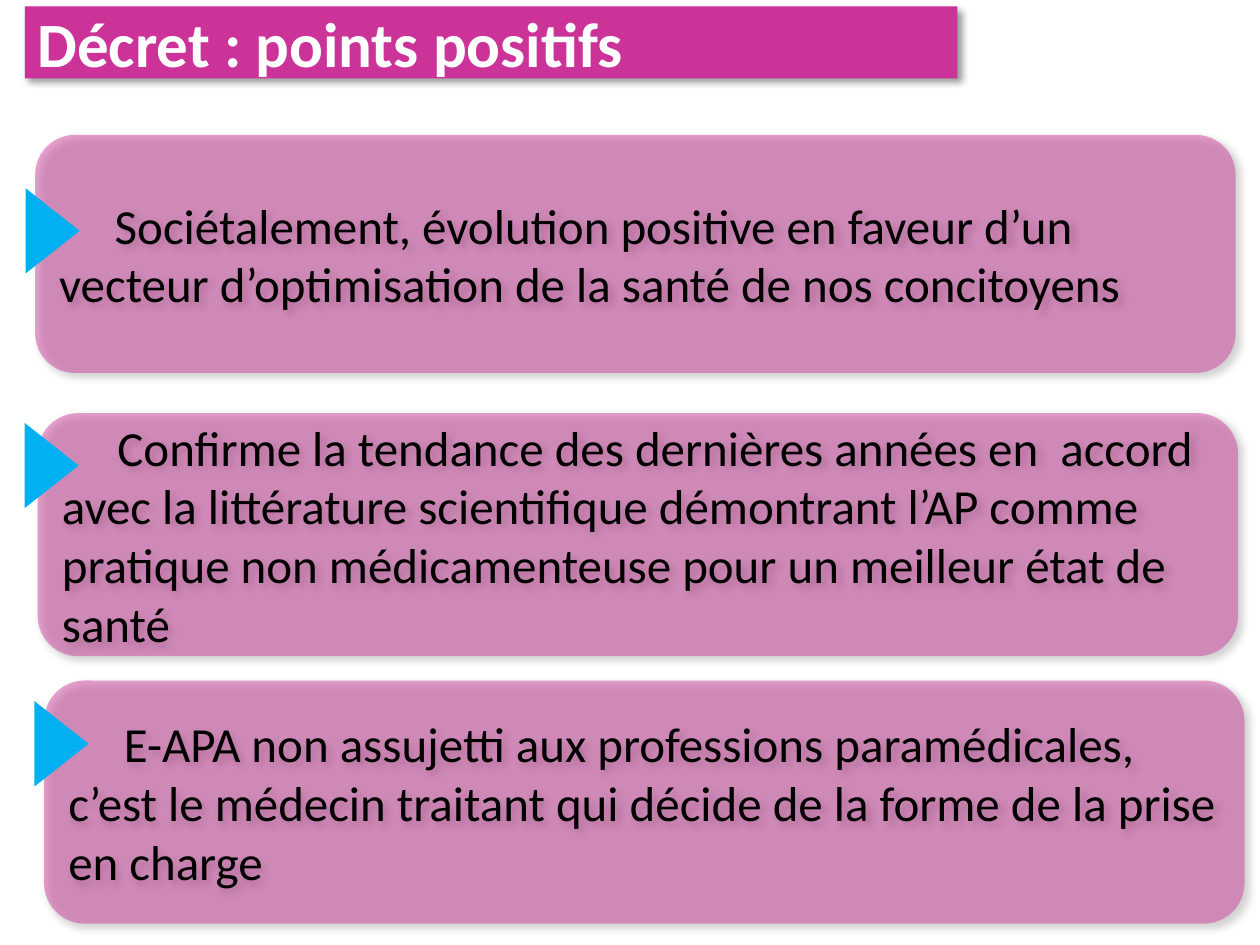
from lxml.etree import SubElement
from pptx import Presentation
from pptx.dml.color import RGBColor
from pptx.enum.shapes import MSO_SHAPE
from pptx.enum.text import MSO_ANCHOR, MSO_AUTO_SIZE, PP_ALIGN
from pptx.oxml.ns import qn
from pptx.util import Cm, Pt

COLORS = {"magenta": "CC3399", "blue": "00B0F0", "white": "FFFFFF", "black": "000000"}
FONT = "Calibri"
TITLE = "Décret : points positifs"
BOX_WIDTH = 24.2
MARKER_WIDTH, MARKER_HEIGHT = 1.72, 1.09
FIRST_LINE_INDENT = 1.12

# text, box (left, top, height) and marker (left, top before rotation), in cm
POINTS = [
    ("Sociétalement, évolution positive en faveur d’un vecteur d’optimisation "
     "de la santé de nos concitoyens", (0.71, 2.72, 4.8), (0.2, 4.11)),
    ("Confirme la tendance des dernières années en  accord avec la littérature "
     "scientifique démontrant l’AP comme pratique non médicamenteuse pour un "
     "meilleur état de santé", (0.76, 8.33, 4.9), (0.18, 8.84)),
    ("E-APA non assujetti aux professions paramédicales, c’est le médecin "
     "traitant qui décide de la forme de la prise en charge",
     (0.89, 13.72, 4.9), (0.38, 14.45)),
]


def fill_shape(shape, color, opacity=100):
    shape.fill.solid()
    shape.fill.fore_color.rgb = RGBColor.from_string(COLORS[color])
    shape.line.fill.background()
    shape.shadow.inherit = False
    if opacity < 100:
        paint = shape.fill._xPr.find(qn("a:solidFill"))[0]
        SubElement(paint, qn("a:alpha"), val=str(opacity * 1000))


def add_shadow(shape):
    effects = shape._element.spPr.find(qn("a:effectLst"))
    shadow = SubElement(effects, qn("a:outerShdw"), blurRad=str(Pt(4)),
                        dist=str(Pt(3)), dir=str(45 * 60000), algn="tl", rotWithShape="0")
    paint = SubElement(shadow, qn("a:srgbClr"), val=COLORS["black"])
    SubElement(paint, qn("a:alpha"), val="40000")


def write_text(shape, text, size, color, bold=False):
    frame = shape.text_frame
    frame.text = text
    frame.word_wrap = True
    frame.auto_size = MSO_AUTO_SIZE.NONE
    frame.vertical_anchor = MSO_ANCHOR.MIDDLE
    para = frame.paragraphs[0]
    para.alignment = PP_ALIGN.LEFT
    font = para.runs[0].font
    font.name, font.size, font.bold = FONT, Pt(size), bold
    font.color.rgb = RGBColor.from_string(COLORS[color])
    return para


def add_title(page):
    title = page.shapes.title
    title.left, title.top, title.width, title.height = Cm(0.5), Cm(0.13), Cm(18.8), Cm(1.45)
    outline = SubElement(title._element.spPr, qn("a:prstGeom"), prst="roundRect")
    SubElement(outline, qn("a:avLst"))
    fill_shape(title, "magenta")
    add_shadow(title)
    write_text(title, TITLE, 36, "white", bold=True)


def add_point(page, text, box_place, marker_place):
    left, top, height = box_place
    box = page.shapes.add_shape(MSO_SHAPE.ROUNDED_RECTANGLE,
                                Cm(left), Cm(top), Cm(BOX_WIDTH), Cm(height))
    fill_shape(box, "magenta", opacity=45)
    add_shadow(box)
    para = write_text(box, text, 28, "black")
    para._p.get_or_add_pPr().set("indent", str(Cm(FIRST_LINE_INDENT)))

    left, top = marker_place
    marker = page.shapes.add_shape(MSO_SHAPE.ISOSCELES_TRIANGLE, Cm(left), Cm(top),
                                   Cm(MARKER_WIDTH), Cm(MARKER_HEIGHT))
    marker.rotation = 90
    fill_shape(marker, "blue")


def main():
    deck = Presentation()
    deck.slide_width, deck.slide_height = Cm(25.4), Cm(19.05)
    page = deck.slides.add_slide(deck.slide_layouts[5])
    add_title(page)
    for point in POINTS:
        add_point(page, *point)
    deck.save("out.pptx")


if __name__ == "__main__":
    main()
